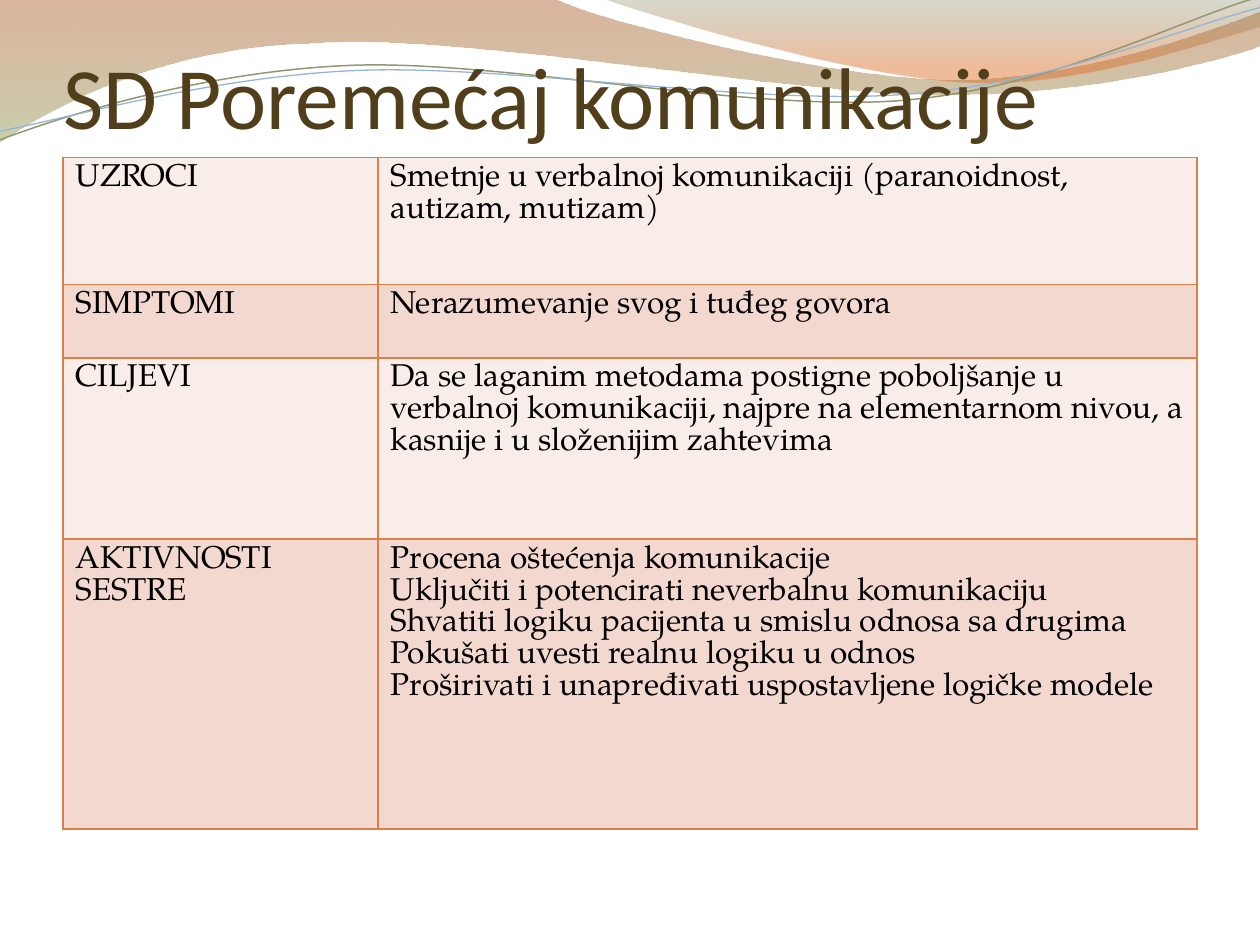
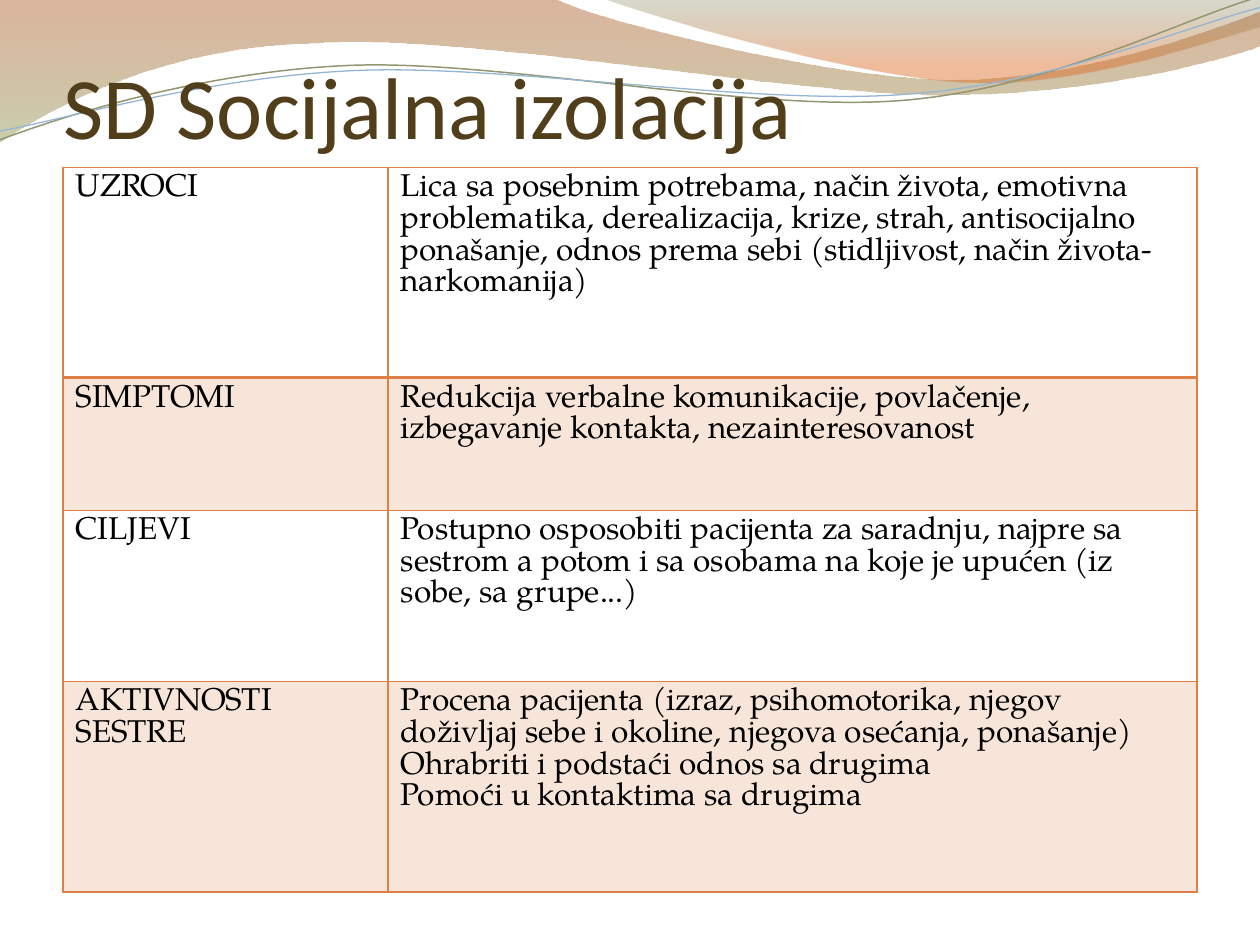
from dataclasses import dataclass
from typing import NamedTuple

from lxml.etree import Element, SubElement
from pptx import Presentation
from pptx.dml.color import RGBColor as Rgb
from pptx.enum.text import MSO_ANCHOR as Anchor, MSO_AUTO_SIZE as AutoSize, PP_ALIGN as Align
from pptx.oxml.ns import qn
from pptx.slide import Slide, SlideMaster
from pptx.table import _Cell as Cell
from pptx.util import Emu, Pt

EMU_PER_PX = 9144
TITLE_ONLY = 5
ROW_LABELS = ("UZROCI", "SIMPTOMI", "CILJEVI", "AKTIVNOSTI SESTRE")


@dataclass(frozen=True)
class Theme:
    title_font: str = "Calibri"
    body_font: str = "TeX Gyre Pagella"
    title_size: int = 50
    body_size: int = 18
    title: str = "513E1B"
    body: str = "000000"
    border: str = "DD8047"
    border_width: int = 1
    heavy_width: int = 2
    pale_band: str = "F9EDE9"
    rose_band: str = "F2D8CF"
    rust: str = "AF5C29"
    olive: str = "9DA66B"
    moss: str = "7D835B"
    orange: str = "DD6B24"
    olive_line: str = "929772"
    blue_line: str = "94B6D2"


THEME = Theme()


class Box(NamedTuple):
    left: int
    top: int
    width: int
    height: int


class Band(NamedTuple):
    color: str
    opacity: int = 100


class Stop(NamedTuple):
    position: float
    color: str
    opacity: int


class Stroke(NamedTuple):
    color: str
    width: float


@dataclass(frozen=True)
class Wave:
    start: tuple[int, int]
    steps: tuple[tuple[int, ...], ...]
    stops: tuple[Stop, ...] = ()
    stroke: Stroke | None = None


@dataclass(frozen=True)
class CarePlan:
    title: str
    title_box: Box
    table_box: Box
    label_width: int
    row_heights: tuple[int, ...]
    bands: tuple[Band | None, Band | None]
    entries: tuple[tuple[str, ...], ...]
    heavy_edge: int | None = None


WAVES = (
    Wave(
        (0, 0),
        (
            (440, -1),
            (476, 17, 664, 63, 758, 63),
            (853, 63, 958, 26, 1000, 9),
            (1001, 36),
            (983, 44, 870, 76, 746, 75),
            (622, 75, 382, 28, 257, 34),
            (129, 36, 46, 83, -1, 113),
            (0, 0),
        ),
        stops=(Stop(0, THEME.rust, 45), Stop(1, THEME.olive, 55)),
    ),
    Wave(
        (479, -1),
        (
            (509, 11, 682, 62, 769, 65),
            (856, 69, 961, 32, 1000, 21),
            (1000, 0),
            (479, -1),
        ),
        stops=(Stop(0, THEME.moss, 30), Stop(0.8, THEME.orange, 45)),
    ),
    Wave(
        (0, 111),
        (
            (48, 93, 158, 57, 277, 52),
            (395, 47, 593, 89, 713, 80),
            (833, 71, 938, 15, 998, -2),
        ),
        stroke=Stroke(THEME.olive_line, 0.85),
    ),
    Wave(
        (0, 104),
        (
            (47, 96, 164, 61, 283, 56),
            (403, 51, 597, 84, 717, 75),
            (836, 67, 941, 21, 1000, 6),
        ),
        stroke=Stroke(THEME.blue_line, 0.75),
    ),
)

PLANS = (
    CarePlan(
        title="SD Poremećaj komunikacije",
        title_box=Box(50, 17, 900, 100),
        table_box=Box(50, 125, 900, 533),
        label_width=250,
        row_heights=(101, 58, 144, 230),
        bands=(Band(THEME.pale_band), Band(THEME.rose_band)),
        entries=(
            ("Smetnje u verbalnoj komunikaciji (paranoidnost, autizam, mutizam)",),
            ("Nerazumevanje svog i tuđeg govora",),
            (
                "Da se laganim metodama postigne poboljšanje u verbalnoj komunikaciji, "
                "najpre na elementarnom nivou, a kasnije i u složenijim zahtevima",
            ),
            (
                "Procena oštećenja komunikacije",
                "Uključiti i potencirati neverbalnu komunikaciju",
                "Shvatiti logiku pacijenta u smislu odnosa sa drugima",
                "Pokušati uvesti realnu logiku u odnos",
                "Proširivati i unapređivati uspostavljene logičke modele",
            ),
        ),
    ),
    CarePlan(
        title="SD Socijalna izolacija",
        title_box=Box(50, 33, 900, 92),
        table_box=Box(50, 133, 900, 575),
        label_width=258,
        row_heights=(167, 105, 136, 167),
        bands=(None, Band(THEME.border, 20)),
        entries=(
            (
                "Lica sa posebnim potrebama, način života, emotivna problematika, "
                "derealizacija, krize, strah, antisocijalno ponašanje, odnos prema sebi "
                "(stidljivost, način života- narkomanija)",
            ),
            ("Redukcija verbalne komunikacije, povlačenje, izbegavanje kontakta, nezainteresovanost",),
            (
                "Postupno osposobiti pacijenta za saradnju, najpre sa sestrom a potom i sa "
                "osobama na koje je upućen (iz sobe, sa grupe...)",
            ),
            (
                "Procena pacijenta (izraz, psihomotorika, njegov doživljaj sebe i okoline, "
                "njegova osećanja, ponašanje)",
                "Ohrabriti i podstaći odnos sa drugima",
                "Pomoći u kontaktima sa drugima",
            ),
        ),
        heavy_edge=1,
    ),
)


def px(length: int) -> Emu:
    return Emu(length * EMU_PER_PX)


def set_opacity(color_element, percent: int) -> None:
    SubElement(color_element, qn("a:alpha"), val=str(percent * 1000))


def style_font(paragraph, font_name: str, size: int, color: str) -> None:
    paragraph.font.name = font_name
    paragraph.font.size = Pt(size)
    paragraph.font.color.rgb = Rgb.from_string(color)


def bend_segments(ribbon, wave: Wave) -> None:
    segments = list(ribbon.element.iter(qn("a:lnTo")))
    for segment, step in zip(segments, wave.steps):
        controls = step[:-2]
        if not controls:
            continue
        segment.tag = qn("a:cubicBezTo")
        for index, (x, y) in enumerate(zip(controls[::2], controls[1::2])):
            control = Element(qn("a:pt"), x=str(px(x) - ribbon.left), y=str(px(y) - ribbon.top))
            segment.insert(index, control)


def draw_wave(slide: Slide, wave: Wave):
    builder = slide.shapes.build_freeform(*map(px, wave.start))
    ends = [(px(step[-2]), px(step[-1])) for step in wave.steps]
    builder.add_line_segments(ends, close=bool(wave.stops))
    ribbon = builder.convert_to_shape()
    bend_segments(ribbon, wave)
    ribbon.shadow.inherit = False
    if wave.stroke:
        ribbon.fill.background()
        ribbon.line.color.rgb = Rgb.from_string(wave.stroke.color)
        ribbon.line.width = Pt(wave.stroke.width)
        return ribbon
    ribbon.line.fill.background()
    ribbon.fill.gradient()
    ribbon.fill.gradient_angle = 270
    for gradient_stop, stop in zip(ribbon.fill.gradient_stops, wave.stops):
        gradient_stop.position = stop.position
        gradient_stop.color.rgb = Rgb.from_string(stop.color)
    for color, stop in zip(ribbon.element.iter(qn("a:srgbClr")), wave.stops):
        set_opacity(color, stop.opacity)
    return ribbon


def add_waves_to_master(slide: Slide, master: SlideMaster) -> None:
    first_id = max(shape.shape_id for shape in master.shapes) + 1
    for shape_id, wave in enumerate(WAVES, first_id):
        ribbon = draw_wave(slide, wave).element
        ribbon.nvSpPr.cNvPr.set("id", str(shape_id))
        master.shapes.element.append(ribbon)


def place_title(slide: Slide, plan: CarePlan) -> None:
    title = slide.shapes.title
    title.left, title.top, title.width, title.height = map(px, plan.title_box)
    frame = title.text_frame
    frame.text = plan.title
    frame.word_wrap = True
    frame.auto_size = AutoSize.NONE
    frame.vertical_anchor = Anchor.BOTTOM
    frame.margin_left = frame.margin_right = frame.margin_bottom = 0
    frame.margin_top = px(5)
    heading = frame.paragraphs[0]
    heading.alignment = Align.LEFT
    style_font(heading, THEME.title_font, THEME.title_size, THEME.title)


def format_cell(cell: Cell, lines: tuple[str, ...], band: Band | None, top: int, bottom: int) -> None:
    cell.text = "\n".join(lines)
    for paragraph in cell.text_frame.paragraphs:
        style_font(paragraph, THEME.body_font, THEME.body_size, THEME.body)
    properties = cell._tc.get_or_add_tcPr()
    side = THEME.border_width
    for edge, width in (("L", side), ("R", side), ("T", top), ("B", bottom)):
        line = SubElement(properties, qn(f"a:ln{edge}"), w=str(Pt(width)))
        SubElement(SubElement(line, qn("a:solidFill")), qn("a:srgbClr"), val=THEME.border)
    if band is None:
        cell.fill.background()
        return
    cell.fill.solid()
    cell.fill.fore_color.rgb = Rgb.from_string(band.color)
    if band.opacity < 100:
        set_opacity(properties.find(qn("a:solidFill"))[0], band.opacity)


def add_plan_table(slide: Slide, plan: CarePlan) -> None:
    table = slide.shapes.add_table(len(ROW_LABELS), 2, *map(px, plan.table_box)).table
    table.first_row = table.horz_banding = False
    table.columns[0].width = px(plan.label_width)
    table.columns[1].width = px(plan.table_box.width - plan.label_width)
    for row, (label, entry) in enumerate(zip(ROW_LABELS, plan.entries)):
        table.rows[row].height = px(plan.row_heights[row])
        top, bottom = (
            THEME.heavy_width if edge == plan.heavy_edge else THEME.border_width
            for edge in (row, row + 1)
        )
        for column, lines in enumerate(((label,), entry)):
            format_cell(table.cell(row, column), lines, plan.bands[row % 2], top, bottom)


def main() -> None:
    deck = Presentation()
    deck.slide_width, deck.slide_height = px(1000), px(750)
    for plan in PLANS:
        slide = deck.slides.add_slide(deck.slide_layouts[TITLE_ONLY])
        place_title(slide, plan)
        add_plan_table(slide, plan)
    add_waves_to_master(deck.slides[0], deck.slide_master)
    deck.save("out.pptx")


if __name__ == "__main__":
    main()
